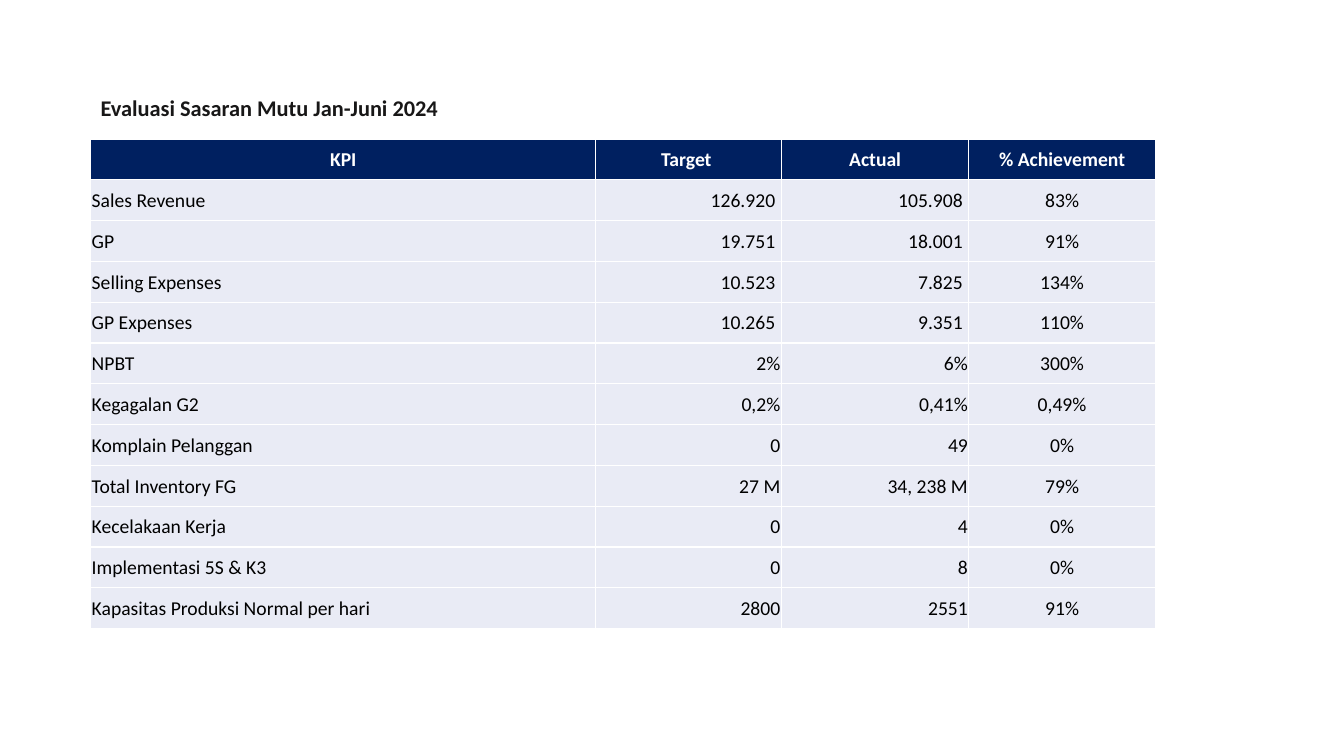
"""Build the KPI evaluation slide for January to June 2024."""
from dataclasses import dataclass

from lxml import etree
from pptx import Presentation
from pptx import util as u
from pptx.dml.color import RGBColor
from pptx.enum import text
from pptx.oxml import ns


@dataclass(frozen=True)
class Theme:
    font: str = "Calibri"
    title_size: int = 16
    table_size: int = 14
    title: str = "181717"
    header: str = "002060"
    header_text: str = "FFFFFF"
    body: str = "E9EBF5"
    body_text: str = "000000"
    border: str = "FFFFFF"


def style(p, size, color, bold):
    p.font.name = theme.font
    p.font.size = u.Pt(size)
    p.font.bold = bold
    p.font.color.rgb = RGBColor.from_string(color)


def add_borders(cell, color):
    tc_pr = cell._tc.get_or_add_tcPr()
    for side in ("a:lnL", "a:lnR", "a:lnT", "a:lnB"):
        ln = etree.SubElement(tc_pr, ns.qn(side), w=str(u.Pt(1)))
        fill = etree.SubElement(ln, ns.qn("a:solidFill"))
        etree.SubElement(fill, ns.qn("a:srgbClr"), val=color)


theme = Theme()
left, center, right = text.PP_ALIGN.LEFT, text.PP_ALIGN.CENTER, text.PP_ALIGN.RIGHT
col_widths = [5.01, 1.84, 1.86, 1.85]
col_aligns = [left, right, right, center]
table_height = 4.86
rows = [
    ("KPI", "Target ", "Actual", "% Achievement"),
    ("Sales Revenue", "126.920", "105.908", "83%"),
    ("GP", "19.751", "18.001", "91%"),
    ("Selling Expenses", "10.523", "7.825", "134%"),
    ("GP Expenses", "10.265", "9.351", "110%"),
    ("NPBT", "2%", "6%", "300%"),
    ("Kegagalan G2", "0,2%", "0,41%", "0,49%"),
    ("Komplain Pelanggan", "0", "49", "0%"),
    ("Total Inventory FG", "27 M", "34, 238 M", "79%"),
    ("Kecelakaan Kerja", "0", "4", "0%"),
    ("Implementasi 5S & K3", "0", "8", "0%"),
    ("Kapasitas Produksi Normal per hari", "2800", "2551", "91%"),
]

prs = Presentation()
prs.slide_width, prs.slide_height = u.Inches(13.33), u.Inches(7.5)
s = prs.slides.add_slide(prs.slide_layouts[6])

table = s.shapes.add_table(
    len(rows), len(col_widths), u.Inches(0.9), u.Inches(1.38),
    u.Inches(sum(col_widths)), u.Inches(table_height),
).table
table.horz_banding = False
for col, width in zip(table.columns, col_widths):
    col.width = u.Inches(width)

for i, values in enumerate(rows):
    is_header = i == 0
    table.rows[i].height = u.Inches(table_height / len(rows))
    for j, value in enumerate(values):
        cell = table.cell(i, j)
        cell.text = value
        cell.vertical_anchor = text.MSO_ANCHOR.MIDDLE
        cell.margin_left = cell.margin_top = u.Inches(0.01)
        cell.margin_right = u.Inches(0.06 if "." in value else 0.01)
        cell.margin_bottom = 0
        add_borders(cell, theme.border)
        cell.fill.solid()
        cell.fill.fore_color.rgb = RGBColor.from_string(theme.header if is_header else theme.body)
        p = cell.text_frame.paragraphs[0]
        p.alignment = center if is_header else col_aligns[j]
        style(p, theme.table_size, theme.header_text if is_header else theme.body_text, is_header)

sp = s.shapes.add_textbox(u.Inches(0.9), u.Inches(0.88), u.Inches(4.7), u.Inches(0.37))
tf = sp.text_frame
tf.word_wrap = True
tf.auto_size = text.MSO_AUTO_SIZE.SHAPE_TO_FIT_TEXT
tf.vertical_anchor = text.MSO_ANCHOR.MIDDLE
p = tf.paragraphs[0]
p.text = "Evaluasi Sasaran Mutu Jan-Juni 2024"
style(p, theme.title_size, theme.title, True)

prs.save("out.pptx")
